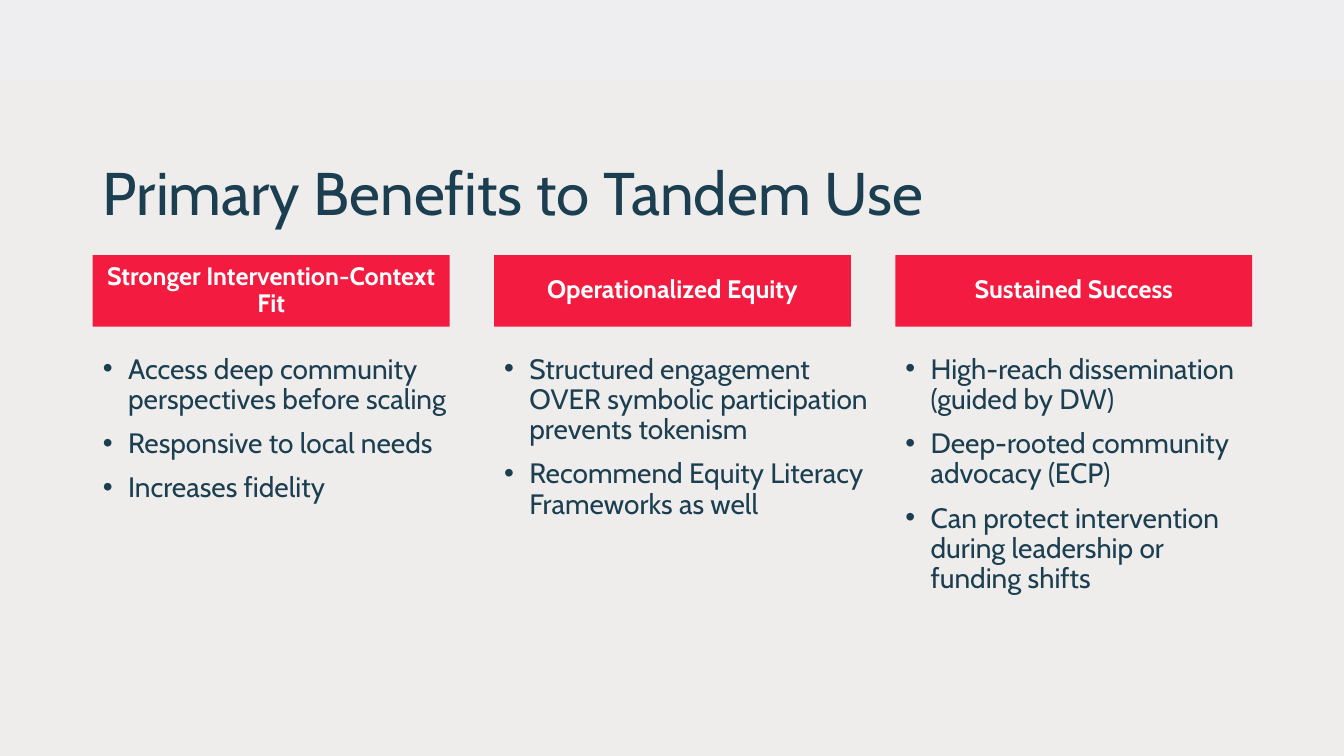
from dataclasses import dataclass

from lxml import etree
from pptx import Presentation, util as u
from pptx.dml import color
from pptx.enum import shapes, text
from pptx.oxml import ns


@dataclass(frozen=True)
class Theme:
    font: str = "Cabin"
    background: str = "EEEDEB"
    band: str = "EEEEF0"
    accent: str = "F31C40"
    ink: str = "1B3E50"
    white: str = "FFFFFF"
    title_size: int = 43
    heading_size: int = 18
    body_size: int = 20


@dataclass(frozen=True)
class Grid:
    """Lengths in inches."""
    width: float = 13.33
    height: float = 7.5
    left: float = 0.92
    pitch: float = 3.98
    column: float = 3.54
    wide_column: float = 3.89
    band_height: float = 0.8
    title_top: float = 1.54
    title_width: float = 11.5
    title_height: float = 0.8
    heading_top: float = 2.53
    heading_height: float = 0.71
    body_top: float = 3.47
    body_height: float = 3.3
    indent: float = 0.25

    def column_left(self, index: int) -> float:
        return self.left + index * self.pitch


@dataclass(frozen=True)
class Benefit:
    heading: str
    points: tuple[str, ...]
    placeholder: int


THEME = Theme()
GRID = Grid()
BENEFITS = (
    Benefit("Stronger Intervention-Context Fit", (
        "Access deep community perspectives before scaling",
        "Responsive to local needs",
        "Increases fidelity"), 1),
    Benefit("Operationalized Equity", (
        "Structured engagement OVER symbolic participation prevents tokenism",
        "Recommend Equity Literacy Frameworks as well"), 2),
    Benefit("Sustained Success", (
        "High-reach dissemination (guided by DW)",
        "Deep-rooted community advocacy (ECP)",
        "Can protect intervention during leadership or funding shifts"), 4),
)
UNUSED_PLACEHOLDER = 3


def place(shape, left: float, top: float, width: float, height: float) -> None:
    shape.left, shape.top = u.Inches(left), u.Inches(top)
    shape.width, shape.height = u.Inches(width), u.Inches(height)


def add_rectangle(slide, fill: str, *box: float):
    shape = slide.shapes.add_shape(
        shapes.MSO_SHAPE.RECTANGLE, *(u.Inches(length) for length in box))
    shape.shadow.inherit = False
    shape.fill.solid()
    shape.fill.fore_color.rgb = color.RGBColor.from_string(fill)
    shape.line.fill.background()
    return shape


def add_bullet(paragraph) -> None:
    properties = paragraph._p.get_or_add_pPr()
    indent = u.Inches(GRID.indent)
    properties.set("marL", str(indent))
    properties.set("indent", str(-indent))
    for tag, name, value in (("a:buFont", "typeface", "Arial"),
                             ("a:buChar", "char", "•")):
        etree.SubElement(properties, ns.qn(tag)).set(name, value)


def write(shape, lines: tuple[str, ...], size: int, ink: str,
          anchor: text.MSO_ANCHOR, align: text.PP_ALIGN,
          bold: bool = False, bullets: bool = False) -> None:
    frame = shape.text_frame
    frame.word_wrap = True
    frame.auto_size = text.MSO_AUTO_SIZE.NONE
    frame.vertical_anchor = anchor
    for index, line in enumerate(lines):
        paragraph = frame.add_paragraph() if index else frame.paragraphs[0]
        if bullets:
            add_bullet(paragraph)
        paragraph.alignment = align
        paragraph.line_spacing = 0.9
        paragraph.space_before = u.Pt(10 if index else 0)
        run = paragraph.add_run()
        run.text = line
        run.font.name = THEME.font
        run.font.size = u.Pt(size)
        run.font.bold = bold
        run.font.color.rgb = color.RGBColor.from_string(ink)


def add_benefit(slide, index: int, benefit: Benefit) -> None:
    left = GRID.column_left(index)
    is_last = index == len(BENEFITS) - 1

    # Heading bar
    heading = add_rectangle(slide, THEME.accent, left, GRID.heading_top,
                            GRID.column, GRID.heading_height)
    write(heading, (benefit.heading,), THEME.heading_size, THEME.white,
          text.MSO_ANCHOR.MIDDLE, text.PP_ALIGN.CENTER, bold=True)

    # Bulleted list
    body = slide.placeholders[benefit.placeholder]
    place(body, left, GRID.body_top,
          GRID.column if is_last else GRID.wide_column, GRID.body_height)
    write(body, benefit.points, THEME.body_size, THEME.ink,
          text.MSO_ANCHOR.TOP, text.PP_ALIGN.LEFT, bullets=True)


def main() -> None:
    presentation = Presentation()
    presentation.slide_width = u.Inches(GRID.width)
    presentation.slide_height = u.Inches(GRID.height)
    comparison = presentation.slide_layouts.get_by_name("Comparison")
    slide = presentation.slides.add_slide(comparison)
    unused = slide.placeholders[UNUSED_PLACEHOLDER].element
    unused.getparent().remove(unused)

    # Background and top band
    slide.background.fill.solid()
    slide.background.fill.fore_color.rgb = color.RGBColor.from_string(
        THEME.background)
    add_rectangle(slide, THEME.band, 0, 0, GRID.width, GRID.band_height)

    # Title
    title = slide.shapes.title
    place(title, GRID.left, GRID.title_top, GRID.title_width, GRID.title_height)
    write(title, ("Primary Benefits to Tandem Use",), THEME.title_size,
          THEME.ink, text.MSO_ANCHOR.MIDDLE, text.PP_ALIGN.LEFT)

    # Benefit columns
    for index, benefit in enumerate(BENEFITS):
        add_benefit(slide, index, benefit)

    presentation.save("out.pptx")


if __name__ == "__main__":
    main()
